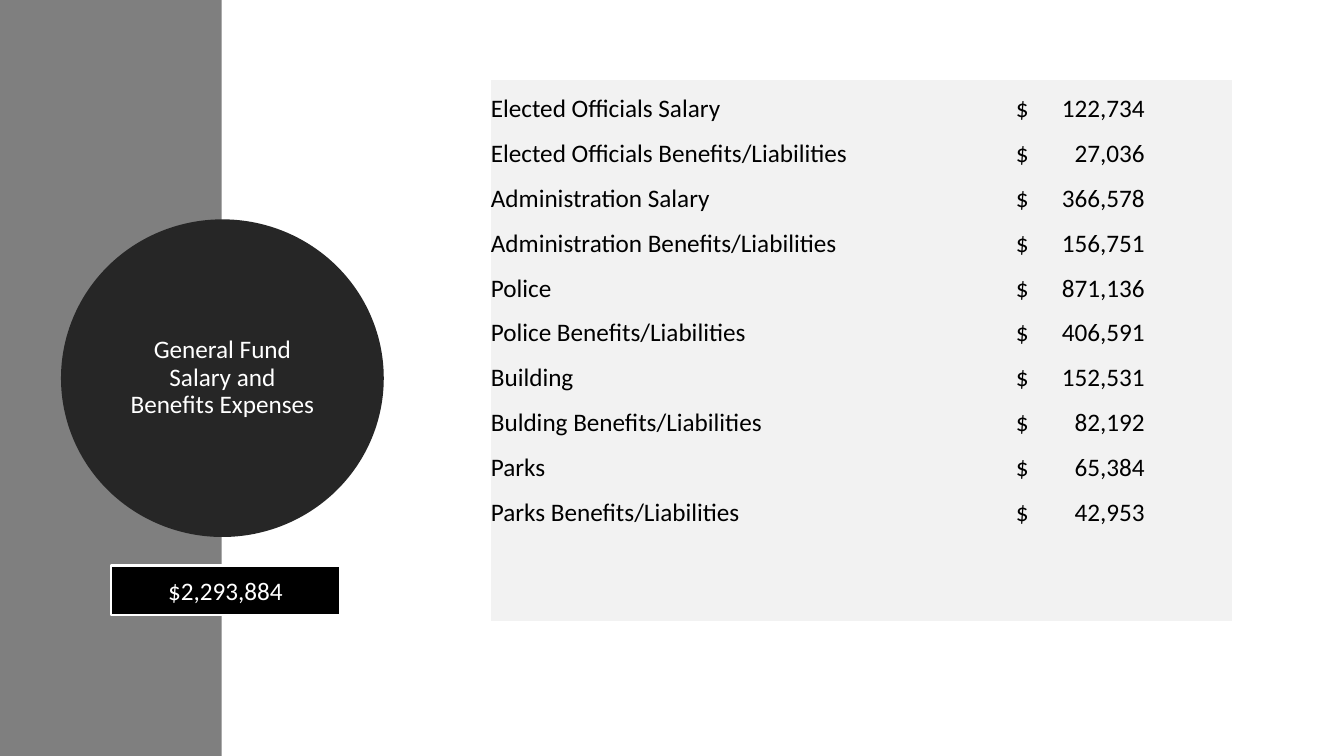
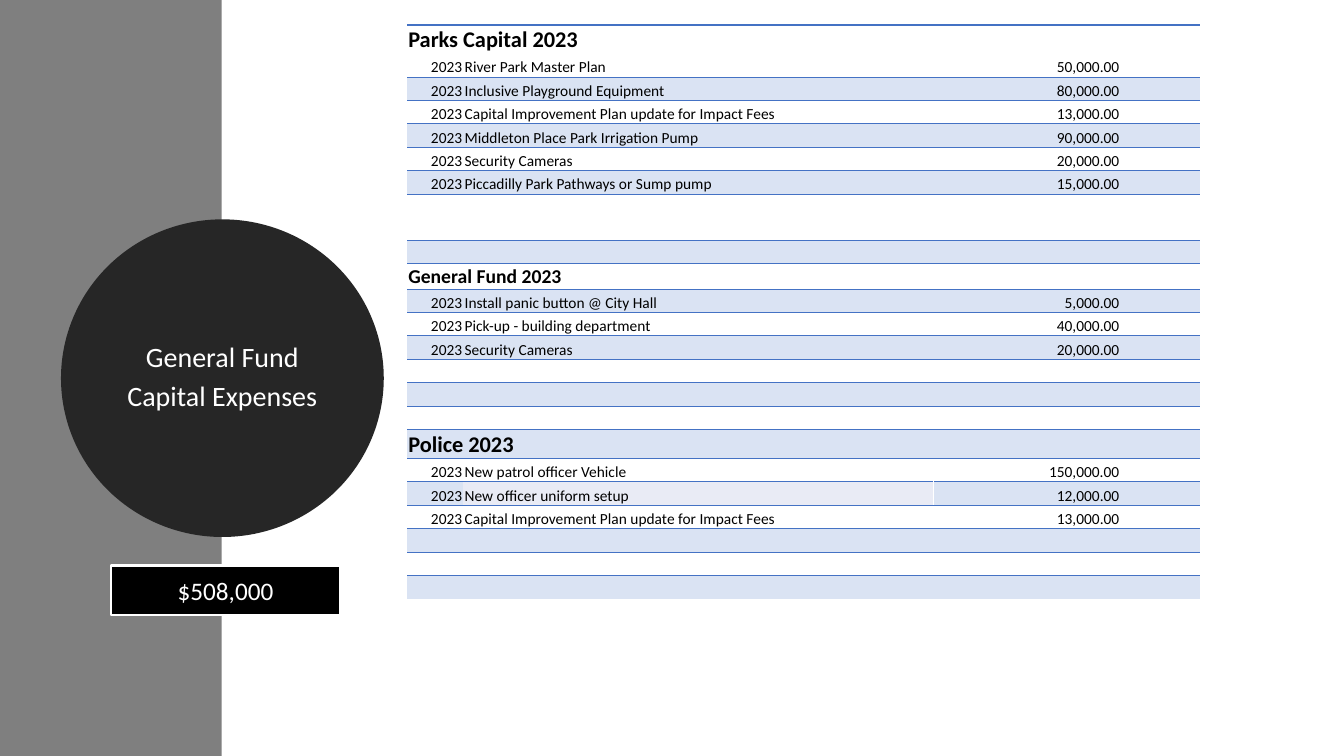
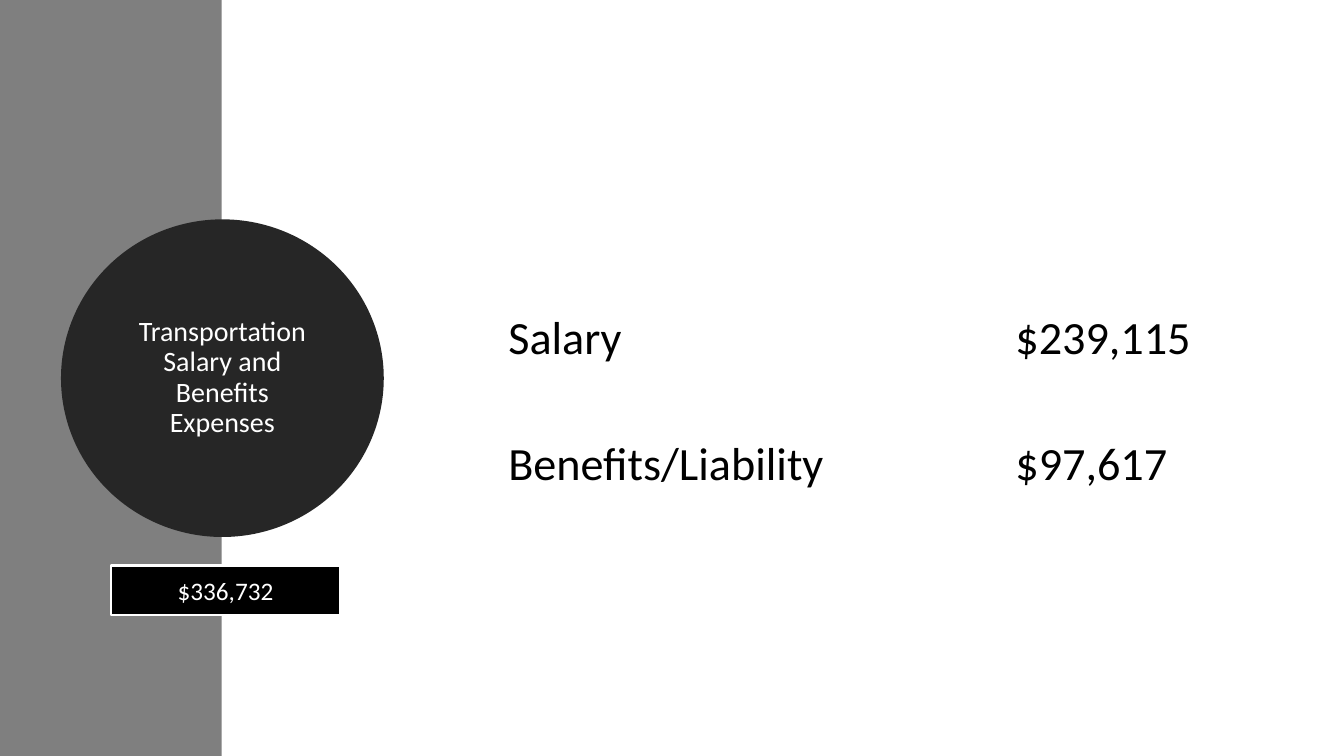
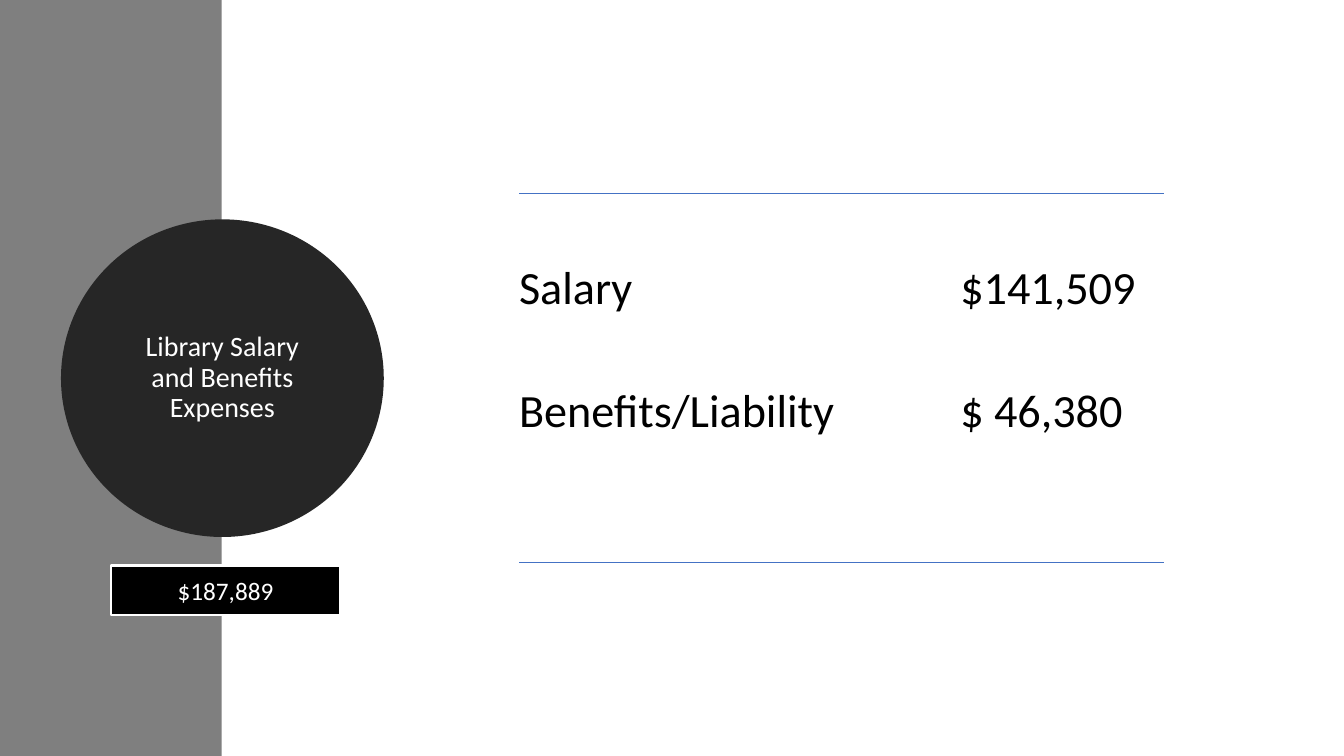
from dataclasses import dataclass

from lxml.etree import SubElement
from pptx import Presentation
from pptx.dml.color import RGBColor
from pptx.enum.shapes import MSO_SHAPE as Shape
from pptx.enum.text import MSO_ANCHOR as Anchor, MSO_AUTO_SIZE as AutoSize, PP_ALIGN as Align
from pptx.oxml.ns import qn
from pptx.util import Cm, Pt


@dataclass(frozen=True)
class Theme:
    font: str = "Calibri"
    white: str = "FFFFFF"
    black: str = "000000"
    band: str = "7F7F7F"
    disc: str = "262626"
    panel: str = "F2F2F2"
    stripe: str = "DAE3F3"
    pale: str = "E9EBF5"
    rule: str = "4472C4"
    small: int = 11
    subheading: int = 14
    heading: int = 16
    body: int = 18
    title: int = 20
    large: int = 33


theme = Theme()
color = RGBColor.from_string
NO_STYLE_NO_GRID = "{2D5ABB26-0587-4C30-8999-92F81FD0307C}"


def write(frame, text, size=theme.body, ink=theme.black, bold=False, align=Align.LEFT,
          spacing=None, after=None, tab=None):
    """Fill a text frame, one paragraph per line; tab is a right tab stop."""
    frame.word_wrap = True
    for number, line in enumerate(text.split("\n")):
        para = frame.add_paragraph() if number else frame.paragraphs[0]
        para.alignment = align
        para.line_spacing = spacing
        para.space_after = after
        if tab:
            stops = SubElement(para._p.get_or_add_pPr(), qn("a:tabLst"))
            SubElement(stops, qn("a:tab"), pos=str(tab), algn="r")
        if line:
            span = para.add_run()
            span.text = line
            span.font.name = theme.font
            span.font.size = Pt(size)
            span.font.bold = bold
            span.font.color.rgb = color(ink)
        else:
            SubElement(para._p, qn("a:endParaRPr"), sz=str(size * 100))


def border(cell, side, ink, width):
    """Draw one cell border; side is L, R, T or B. Call before filling the cell."""
    line = SubElement(cell._tc.get_or_add_tcPr(), qn("a:ln" + side), w=str(Pt(width)))
    SubElement(SubElement(line, qn("a:solidFill")), qn("a:srgbClr"), val=ink)


# Content: a row with one entry is a heading, an empty row is a gap
salaries = [
    ("Elected Officials Salary", "$\t122,734"),
    ("Elected Officials Benefits/Liabilities", "$\t27,036"),
    ("Administration Salary", "$\t366,578"),
    ("Administration Benefits/Liabilities", "$\t156,751"),
    ("Police", "$\t871,136"),
    ("Police Benefits/Liabilities", "$\t406,591"),
    ("Building", "$\t152,531"),
    ("Bulding Benefits/Liabilities", "$\t82,192"),
    ("Parks", "$\t65,384"),
    ("Parks Benefits/Liabilities", "$\t42,953"),
    (), (),
]
capital = [
    ("Parks Capital 2023",),
    ("2023", "River Park Master Plan", "50,000.00"),
    ("2023", "Inclusive Playground Equipment", "80,000.00"),
    ("2023", "Capital Improvement Plan update for Impact Fees", "13,000.00"),
    ("2023", "Middleton Place Park Irrigation Pump", "90,000.00"),
    ("2023", "Security Cameras", "20,000.00"),
    ("2023", "Piccadilly Park Pathways or Sump pump", "15,000.00"),
    (), (),
    ("General Fund 2023",),
    ("2023", "Install panic button @ City Hall", "5,000.00"),
    ("2023", "Pick-up - building department", "40,000.00"),
    ("2023", "Security Cameras", "20,000.00"),
    (), (), (),
    ("Police 2023",),
    ("2023", "New patrol officer Vehicle", "150,000.00"),
    ("2023", "New officer uniform setup", "12,000.00"),
    ("2023", "Capital Improvement Plan update for Impact Fees", "13,000.00"),
    (), (), (),
]
heading_sizes = {"General Fund 2023": theme.subheading}

# Lengths in cm; "indent" is the left inset of the amounts, "tall" holds row exceptions
pages = [
    dict(title="General Fund Salary and Benefits Expenses", title_size=theme.body,
         total="$2,293,884", rows=salaries, size=theme.body, at=(12.37, 2.01),
         columns=(13.08, 5.61), row_height=1.13, tall={10: 1.22}, inset=0, indent=0.15,
         tab=Cm(3.25), fill=theme.panel),
    dict(title="General Fund\nCapital Expenses", total="$508,000", rows=capital,
         size=theme.small, at=(10.26, 0.62), columns=(1.42, 11.84, 6.71), row_height=0.59,
         tall={0: 0.73, 7: 1.17, 16: 0.73}, inset=0.03, indent=0.03, amount_inset=2.02),
    dict(title="Transportation Salary and Benefits Expenses", total="$336,732",
         rows=[("Salary", "$239,115"), ("Benefits/Liability", "$97,617")],
         size=theme.large, at=(12.73, 6.07), columns=(11.18, 6.65), row_height=3.18,
         inset=0.08, indent=1.68),
    dict(title="Library Salary and Benefits Expenses", total="$187,889",
         rows=[("Salary", "$141,509"), ("Benefits/Liability", "$ 46,380"), ()],
         size=theme.large, at=(13.08, 4.88), columns=(9.27, 6.98), row_height=3.1,
         inset=0, indent=1.85, ruled=True),
]

deck = Presentation()
deck.slide_width, deck.slide_height = Cm(33.87), Cm(19.05)

for page in pages:
    slide = deck.slides.add_slide(deck.slide_layouts[5])
    shapes = slide.shapes

    # Side band, disc and total box
    frames = [
        (Shape.RECTANGLE, (0, 0, 5.59, 19.05), theme.band, None, 0),
        (Shape.OVAL, (1.78, 5.77, 7.65, 7.52), theme.disc, theme.disc, 13.75),
        (Shape.RECTANGLE, (2.79, 14.25, 5.79, 1.24), theme.black, theme.white, 1.5),
    ]
    for layer, (kind, place, fill, outline, width) in enumerate(frames):
        box = shapes.add_shape(kind, *map(Cm, place))
        box.shadow.inherit = False
        box.fill.solid()
        box.fill.fore_color.rgb = color(fill)
        if outline:
            box.line.color.rgb = color(outline)
            box.line.width = Pt(width)
        else:
            box.line.fill.background()
        shapes._spTree.insert(2 + layer, box._element)  # keep behind the title
    box.text_frame.vertical_anchor = Anchor.MIDDLE
    write(box.text_frame, page["total"], ink=theme.white, align=Align.CENTER)

    # Title inside the disc
    title = shapes.title
    title.left, title.top, title.width, title.height = map(Cm, (2.9, 6.87, 5.41, 5.31))
    title.text_frame.auto_size = AutoSize.NONE
    title.text_frame.vertical_anchor = Anchor.MIDDLE
    write(title.text_frame, page["title"], size=page.get("title_size", theme.title),
          ink=theme.white, align=Align.CENTER, spacing=0.9, after=Pt(6))

    # Table grid
    rows, columns = page["rows"], page["columns"]
    heights = [page.get("tall", {}).get(r, page["row_height"]) for r in range(len(rows))]
    place = (*page["at"], sum(columns), sum(heights))
    table = shapes.add_table(len(rows), len(columns), *map(Cm, place)).table
    table.first_row = table.horz_banding = False
    table._tbl.tblPr.find(qn("a:tableStyleId")).text = NO_STYLE_NO_GRID
    for column, width in zip(table.columns, columns):
        column.width = Cm(width)
    for row, height in zip(table.rows, heights):
        row.height = Cm(height)

    # Table cells
    last = len(columns) - 1
    banded = rows is capital
    for r, entries in enumerate(rows):
        heading = len(entries) == 1
        size = heading_sizes.get(entries[0], theme.heading) if heading else page["size"]
        if heading:
            table.cell(r, 0).merge(table.cell(r, 1))
        for c in range(len(columns)):
            cell = table.cell(r, c)
            amount = c == last
            cell.vertical_anchor = Anchor.BOTTOM
            cell.margin_left = Cm(page["indent"] if amount else page["inset"])
            cell.margin_right = Cm(page.get("amount_inset", page["inset"]) if amount
                                   else page["inset"])
            cell.margin_top, cell.margin_bottom = Cm(page["inset"]), 0
            right = banded and not heading and c != 1
            write(cell.text_frame, entries[c] if c < len(entries) else "", size=size,
                  bold=heading, align=Align.RIGHT if right else Align.LEFT,
                  tab=page.get("tab") if amount else None)

            # Rules and fills
            fill = page.get("fill")
            if banded and r % 2 == 0:
                marked = entries[1:2] == ("New officer uniform setup",) and c == 1
                if marked:
                    border(cell, "R", theme.white, 1)
                border(cell, "T", theme.rule, 0.75 if r else 1.5)
                if r:
                    fill = theme.pale if marked else theme.stripe
            if page.get("ruled") and r in (0, len(rows) - 1):
                border(cell, "B" if r else "T", theme.rule, 1)
            if fill:
                cell.fill.solid()
                cell.fill.fore_color.rgb = color(fill)

deck.save("out.pptx")
